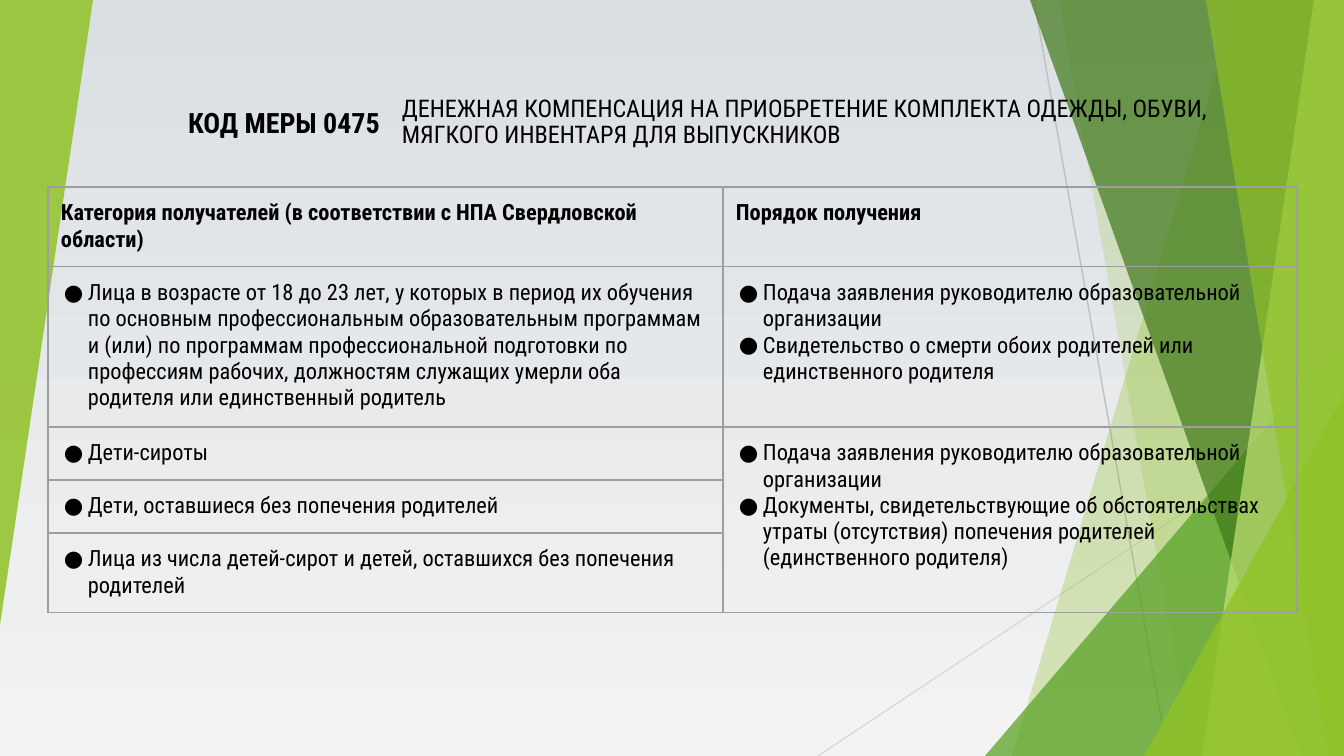
from collections import namedtuple
from dataclasses import dataclass

from lxml.etree import SubElement
from pptx import Presentation
from pptx.dml.color import RGBColor as Color
from pptx.enum.shapes import MSO_CONNECTOR as Connector, MSO_SHAPE as Shape
from pptx.enum.text import MSO_ANCHOR as Anchor, PP_ALIGN as Align
from pptx.oxml.ns import qn
from pptx.util import Pt

SCALE = 914400 / 134.4  # EMU in one px
Box = namedtuple("Box", "left top width height")


@dataclass(frozen=True)
class Theme:
    font: str = "Roboto Condensed"
    code_size: int = 15
    title_size: int = 13
    table_size: int = 12
    ink: str = "000000"
    border: str = "9E9E9E"
    sky: str = "DADFE4"
    ground: str = "F3F3F3"
    ray_dark: str = "BFBFBF"
    ray_light: str = "D9D9D9"
    lime: str = "90C226"
    pale: str = "C0E474"
    green: str = "54A021"
    forest: str = "3F7819"


THEME = Theme()

ROWS = [
    (["Категория получателей (в соответствии с НПА Свердловской области)"],
     ["Порядок получения"]),
    (["Лица в возрасте от 18 до 23 лет, у которых в период их обучения по основным "
      "профессиональным образовательным программам и (или) по программам "
      "профессиональной подготовки по профессиям рабочих, должностям служащих "
      "умерли оба родителя или единственный родитель"],
     ["Подача заявления руководителю образовательной организации",
      "Свидетельство о смерти обоих родителей или единственного родителя"]),
    (["Дети-сироты"],
     ["Подача заявления руководителю образовательной организации",
      "Документы, свидетельствующие об обстоятельствах утраты (отсутствия) "
      "попечения родителей (единственного родителя)"]),
    (["Дети, оставшиеся без попечения родителей"], []),
    (["Лица из числа детей-сирот и детей, оставшихся без попечения родителей"], []),
]


def px(length):
    return round(length * SCALE)


def place(box):
    return [px(length) for length in box]


def write(para, text, size, bold=False, align=Align.LEFT, spacing=None, bullet=False):
    para.alignment = align
    if spacing:
        para.line_spacing = spacing
    span = para.add_run()
    span.text = text
    span.font.name = THEME.font
    span.font.size = Pt(size)
    span.font.bold = bold
    span.font.color.rgb = Color.from_string(THEME.ink)
    if bullet:
        props = para._p.get_or_add_pPr()
        props.set("marL", str(px(27)))
        props.set("indent", str(px(-24)))
        tint = SubElement(props, qn("a:buClr"))
        SubElement(tint, qn("a:srgbClr"), val=THEME.ink)
        SubElement(props, qn("a:buFont"), typeface=THEME.font)
        SubElement(props, qn("a:buChar"), char="●")


def set_margins(frame, across, down):
    frame.margin_left = frame.margin_right = px(across)
    frame.margin_top = frame.margin_bottom = px(down)


def paint(shape, color, opacity):
    shape.shadow.inherit = False
    shape.line.fill.background()
    shape.fill.solid()
    shape.fill.fore_color.rgb = Color.from_string(color)
    tint = shape.fill._xPr.find(".//" + qn("a:srgbClr"))
    SubElement(tint, qn("a:alpha"), val=str(opacity * 1000))


def add_ray(page, start, end, color):
    ray = page.shapes.add_connector(Connector.STRAIGHT, *place(start + end))
    ray.line.color.rgb = Color.from_string(color)
    ray.line.width = Pt(0.75)
    SubElement(ray._element.spPr, qn("a:effectLst"))


def add_band(page, box, top_x, bottom_x, color, opacity):
    """Fill from a slanted left edge to the right side of the box."""
    right, bottom = box.left + box.width, box.top + box.height
    outline = page.shapes.build_freeform(box.left + top_x, box.top, scale=SCALE)
    outline.add_line_segments(
        [(right, box.top), (right, bottom), (box.left + bottom_x, bottom)])
    paint(outline.convert_to_shape(), color, opacity)


def add_wedge(page, box, color, opacity, rotation=0):
    wedge = page.shapes.add_shape(Shape.ISOSCELES_TRIANGLE, *place(box))
    wedge.adjustments[0] = 1
    wedge.rotation = rotation
    paint(wedge, color, opacity)


def add_backdrop(page, box):
    fill = page.background.fill
    fill.gradient()
    fill.gradient_angle = 270
    for stop, color, position in zip(
            fill.gradient_stops, (THEME.sky, THEME.ground), (0, 1)):
        stop.color.rgb = Color.from_string(color)
        stop.position = position

    # Thin rays
    left, top, width, height = box
    right, bottom = left + width, top + height
    add_ray(page, (right - 310, top), (right - 176, bottom), THEME.ray_dark)
    add_ray(page, (right, top + 406), (right - 526, bottom), THEME.ray_light)

    # Overlapping facets on the right, from back to front
    add_band(page, box, 1238, 1012, THEME.lime, 30)
    add_band(page, box, 1059, 1192, THEME.lime, 20)
    add_wedge(page, Box(right - 359, bottom - 420, 359, 420), THEME.green, 72)
    add_band(page, box, 1030, 1301, THEME.forest, 70)
    add_band(page, box, 1314, 1202, THEME.pale, 70)
    add_band(page, box, 1206, 1328, THEME.lime, 65)
    add_wedge(page, Box(right - 200, bottom - 361, 200, 361), THEME.lime, 80)

    # Left facet
    add_wedge(page, Box(left, top, 93, 625), THEME.lime, 85, rotation=180)


def add_label(page, box, text, margins, **style):
    frame = page.shapes.add_textbox(*place(box)).text_frame
    frame.word_wrap = True
    frame.vertical_anchor = Anchor.MIDDLE
    set_margins(frame, *margins)
    write(frame.paragraphs[0], text, **style)


def add_heading(page, box):
    code_width = 283
    add_label(page, box._replace(width=code_width), "КОД МЕРЫ 0475", (13, 13),
              size=THEME.code_size, bold=True, align=Align.RIGHT)
    add_label(page, box._replace(left=box.left + code_width, width=box.width - code_width),
              "ДЕНЕЖНАЯ КОМПЕНСАЦИЯ НА ПРИОБРЕТЕНИЕ КОМПЛЕКТА ОДЕЖДЫ, ОБУВИ, "
              "МЯГКОГО ИНВЕНТАРЯ ДЛЯ ВЫПУСКНИКОВ", (9, 5),
              size=THEME.title_size, spacing=0.9)


def style_cell(cell):
    set_margins(cell, 13, 13)
    cell.fill.background()
    props = cell._tc.get_or_add_tcPr()
    for index, side in enumerate(("lnL", "lnR", "lnT", "lnB")):
        line = SubElement(props, qn("a:" + side), w=str(Pt(0.75)))
        fill = SubElement(line, qn("a:solidFill"))
        SubElement(fill, qn("a:srgbClr"), val=THEME.border)
        props.insert(index, line)


def add_measures(page, box):
    table = page.shapes.add_table(len(ROWS), 2, *place(box)).table
    table.first_row = table.horz_banding = False
    for column, width in zip(table.columns, (675, box.width - 675)):
        column.width = px(width)
    for row, height in zip(table.rows, (79, 158, 53, 53, 79)):
        row.height = px(height)
    table.cell(2, 1).merge(table.cell(4, 1))
    for row_index, row in enumerate(ROWS):
        header = row_index == 0
        for column_index, lines in enumerate(row):
            cell = table.cell(row_index, column_index)
            style_cell(cell)
            for index, text in enumerate(lines):
                frame = cell.text_frame
                para = frame.add_paragraph() if index else frame.paragraphs[0]
                write(para, text, THEME.table_size, bold=header, bullet=not header)


def main():
    deck = Presentation()
    deck.slide_width, deck.slide_height = px(1344), px(756)
    page = deck.slides.add_slide(deck.slide_layouts[6])
    add_backdrop(page, Box(0, 0, 1344, 756))
    add_heading(page, Box(110, 71, 1129, 103))
    add_measures(page, Box(48, 187, 1249, 422))
    deck.save("out.pptx")


if __name__ == "__main__":
    main()
